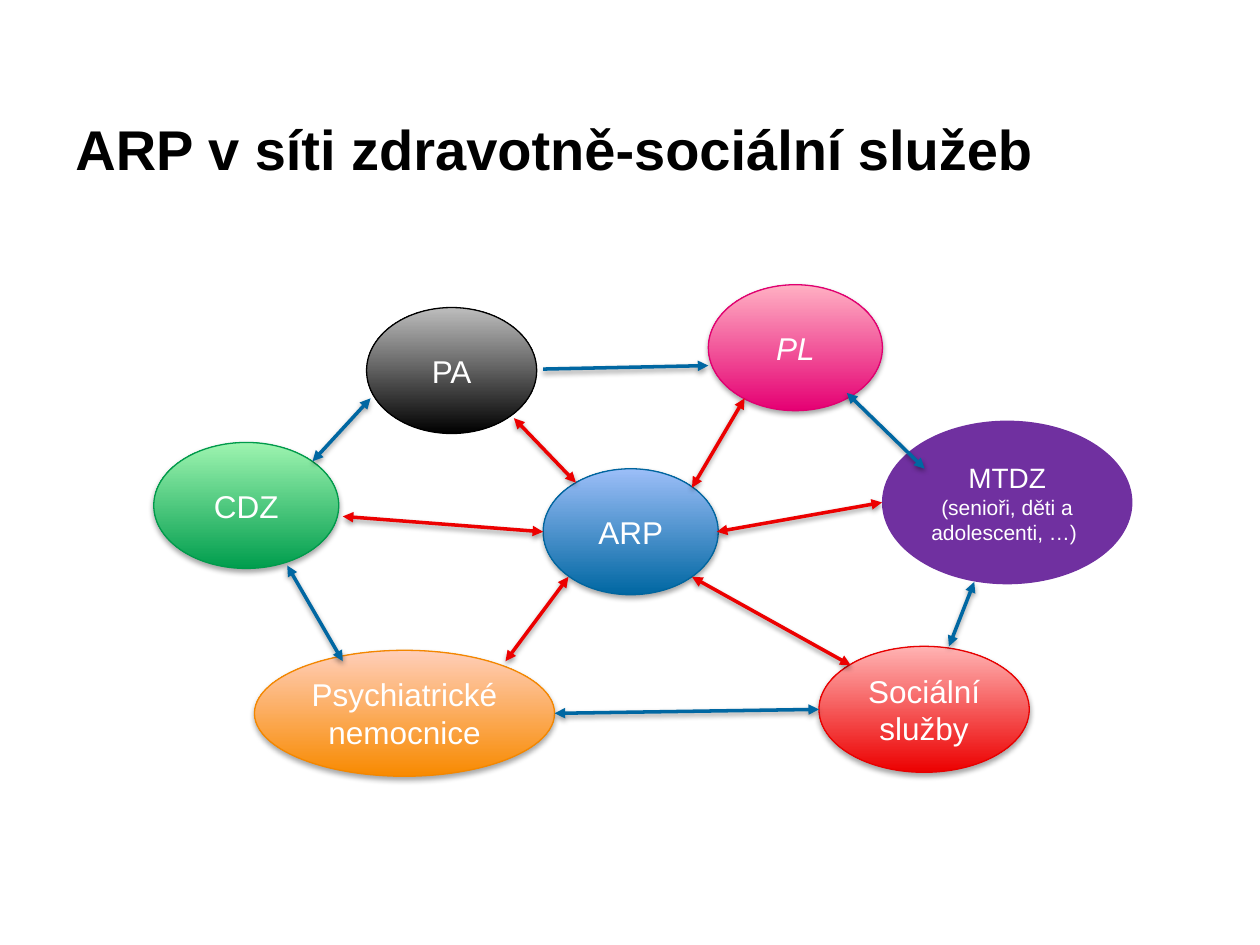
from lxml import etree
from pptx import Presentation
from pptx import util as u
from pptx.dml.color import RGBColor
from pptx.enum import shapes, text
from pptx.oxml import ns

COLOURS = {
    "ink": "000000", "paper": "FFFFFF", "red": "EC0000", "blue": "0067A2",
    "purple": "7030A0",
}
NODES = [
    ([("ARP", 18)], (7.85, 3.71, 3.53, 2.54), ("0067A2", "9CBEF8", "00659E"), True),
    ([("PL", 18)], (11.18, 0, 3.51, 2.54), ("E50073", "FFB0C3", "E00070"), True),
    ([("CDZ", 18)], (0, 3.18, 3.73, 2.54), ("009D4D", "9EF4B0", "009A4B"), True),
    ([("Psychiatrické nemocnice", 18)], (2.03, 7.37, 6.05, 2.54),
     ("F88A00", "FFCEB9", "F38700"), True),
    ([("Sociální služby", 18)], (13.41, 7.29, 4.24, 2.54),
     ("EC0000", "FFB3B3", "E70000"), True),
    ([("MTDZ", 16), (" (senioři, děti a adolescenti, …) ", 12)],
     (14.68, 2.74, 5.05, 3.3), None, False),
    ([("PA", 18)], (4.29, 0.46, 3.43, 2.54), ("000000", "BDBDBD", "000000"), False),
]
LINKS = {
    "red": [
        (7.26, 2.69, 8.51, 3.99), (11.91, 2.29, 10.85, 4.09),
        (14.68, 4.39, 11.35, 4.98), (14.05, 7.67, 10.85, 5.89),
        (8.36, 5.89, 7.09, 7.59), (7.85, 4.98, 3.81, 4.67),
    ],
    "blue": [
        (7.85, 1.7, 11.18, 1.63), (13.97, 2.18, 15.54, 3.71),
        (16.54, 5.99, 16.03, 7.29), (13.41, 8.56, 8.08, 8.64),
        (3.81, 7.59, 2.69, 5.66), (3.2, 3.56, 4.37, 2.29),
    ],
}
ONE_WAY = LINKS["blue"][0]


def rgb(value):
    """Turn a hex string into a colour."""
    return RGBColor.from_string(value)


def apply(target, values):
    """Set each attribute of the target from a dict."""
    for name, value in values.items():
        setattr(target, name, value)


def add_span(para, words, size, colour, **extra):
    """Add one formatted run to a paragraph."""
    span = para.add_run()
    span.text = words
    apply(span.font, {"name": "Arial", "size": u.Pt(size), **extra})
    span.font.color.rgb = rgb(COLOURS[colour])


def add_shadow(item, alpha, distance):
    """Give a shape or connector a soft shadow falling downwards."""
    properties = item._element.spPr
    effects = properties.find(ns.qn("a:effectLst"))
    if effects is None:
        effects = etree.SubElement(properties, ns.qn("a:effectLst"))
    outer = etree.SubElement(
        effects, ns.qn("a:outerShdw"), blurRad=str(u.Pt(3.1)),
        dist=str(u.Pt(distance)), dir="5400000", rotWithShape="0")
    colour = etree.SubElement(outer, ns.qn("a:srgbClr"), val=COLOURS["ink"])
    etree.SubElement(colour, ns.qn("a:alpha"), val=str(alpha * 1000))


def add_title(page, box, words):
    """Place the heading in its box."""
    frame = page.shapes.add_textbox(*map(u.Cm, box)).text_frame
    apply(frame, {"word_wrap": True, "vertical_anchor": text.MSO_ANCHOR.MIDDLE})
    add_span(frame.paragraphs[0], words, 32, "ink", bold=True)


def add_node(page, box, spans, tones, shaded):
    """Draw one service as an ellipse with centred words."""
    node = page.shapes.add_shape(shapes.MSO_SHAPE.OVAL, *map(u.Cm, box))
    node.shadow.inherit = False
    if tones:
        node.fill.gradient()
        node.fill.gradient_angle = 90
        for stop, tone in zip(node.fill.gradient_stops, tones):
            stop.color.rgb = rgb(tone)
        node.line.color.rgb = rgb(tones[2])
        node.line.width = u.Pt(0.75)
    else:
        node.fill.solid()
        node.fill.fore_color.rgb = rgb(COLOURS["purple"])
        node.line.fill.background()
    if shaded:
        add_shadow(node, 35, 1.8)
    frame = node.text_frame
    apply(frame, {"word_wrap": True, "vertical_anchor": text.MSO_ANCHOR.MIDDLE})
    para = frame.paragraphs[0]
    para.alignment = text.PP_ALIGN.CENTER
    for words, size in spans:
        add_span(para, words, size, "paper", italic=words == "PL")


def add_link(page, ends, colour, ends_with_heads):
    """Draw one arrow between two services."""
    link = page.shapes.add_connector(
        shapes.MSO_CONNECTOR.STRAIGHT, *map(u.Cm, ends))
    link.line.color.rgb = rgb(COLOURS[colour])
    link.line.width = u.Pt(2)
    outline = link.line._get_or_add_ln()
    for end in ends_with_heads:
        etree.SubElement(outline, ns.qn(end), type="triangle")
    add_shadow(link, 38, 1.6)


def add_network(page, box):
    """Place the services and their links relative to the box."""
    left, top = box[:2]
    for spans, (x, y, width, height), tones, shaded in NODES:
        add_node(page, (left + x, top + y, width, height), spans, tones, shaded)
    for colour, links in LINKS.items():
        for link in links:
            x1, y1, x2, y2 = link
            heads = ["a:tailEnd"] if link == ONE_WAY else ["a:headEnd", "a:tailEnd"]
            add_link(page, (left + x1, top + y1, left + x2, top + y2), colour, heads)


def main():
    """Build and save the deck."""
    deck = Presentation()
    apply(deck, {"slide_width": u.Cm(25.4), "slide_height": u.Cm(19.05)})
    page = deck.slides.add_slide(deck.slide_layouts[6])
    add_title(page, (1.27, 1.85, 21.56, 2.29), "ARP v síti zdravotně-sociální služeb")
    add_network(page, (3.1, 5.74, 19.73, 9.91))
    deck.save("out.pptx")


if __name__ == "__main__":
    main()
